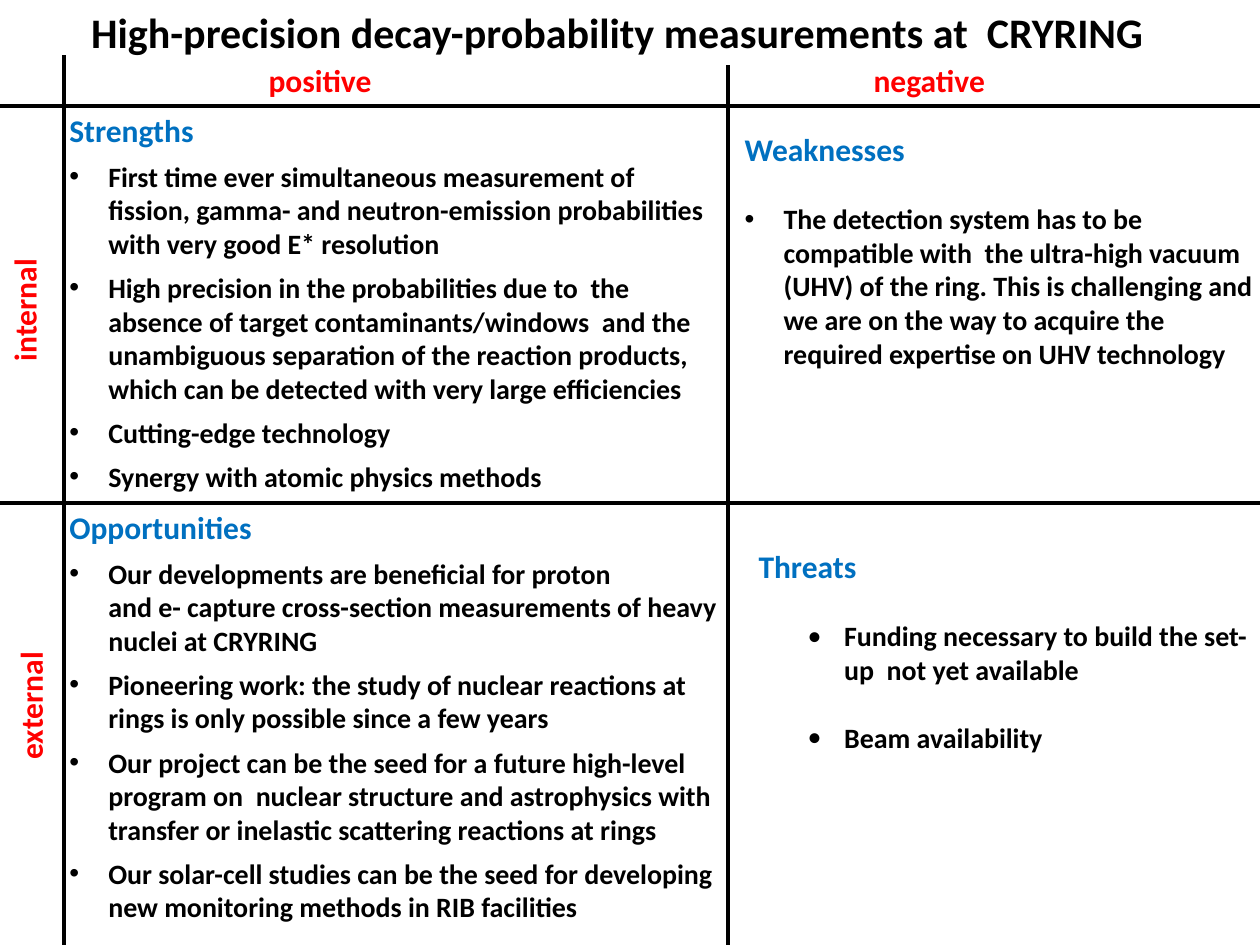
import pptx
import pptx.util
import pptx.dml.color
import pptx.enum.shapes
import pptx.enum.text
import pptx.oxml.ns
import lxml.etree

Inches = pptx.util.Inches
Pt = pptx.util.Pt
qn = pptx.oxml.ns.qn
CENTER = pptx.enum.text.PP_ALIGN.CENTER


def paint(target, code):
    target.rgb = pptx.dml.color.RGBColor.from_string(code)


def write(para, text, size, code):
    para.text = text
    style = {"name": "Calibri", "size": Pt(size), "bold": True}
    for run in para.runs:
        for key, value in style.items():
            setattr(run.font, key, value)
        paint(run.font.color, code)


deck = pptx.Presentation()
deck.slide_width = Inches(10)
deck.slide_height = Inches(7.5)
slide = deck.slides.add_slide(deck.slide_layouts[6])
shapes = slide.shapes

left, mid, top, half = 0.51, 5.78, 0.84, 3.99
lines = [
    (mid, 0.52, mid, 7.5),
    (left, 0.44, left, 7.5),
    (0, top, 10, top),
    (0, half, 10, half),
]
for ends in lines:
    line = shapes.add_connector(
        pptx.enum.shapes.MSO_CONNECTOR.STRAIGHT, *[Inches(end) for end in ends]
    )
    line.line.width = Pt(2.25)
    paint(line.line.color, "000000")
    props = line._element.find(qn("p:spPr"))
    lxml.etree.SubElement(props, qn("a:effectLst"))

inset = Inches(0.04)
frame = {
    "margin_left": inset,
    "margin_right": inset,
    "margin_top": inset,
    "margin_bottom": inset,
    "word_wrap": True,
    "auto_size": pptx.enum.text.MSO_AUTO_SIZE.SHAPE_TO_FIT_TEXT,
}

panels = [
    ("Strengths", (left, top, 5.2, 3.14), 0.31, 0.31, "Arial", 6, [
        "First time ever simultaneous measurement of fission, gamma- and neutron-emission probabilities with very good E* resolution",
        "High precision in the probabilities due to  the absence of target contaminants/windows  and the unambiguous separation of the reaction products, which can be detected with very large efficiencies",
        "Cutting-edge technology",
        "Synergy with atomic physics methods",
    ]),
    ("Weaknesses", (5.87, 0.99, 4.13, 2), 0.31, 0.31, "Arial", 19.5, [
        "The detection system has to be compatible with  the ultra-high vacuum (UHV) of the ring. This is challenging and we are on the way to acquire the required expertise on UHV technology",
    ]),
    ("Opportunities", (left, half, 5.28, 3.68), 0.31, 0.31, "Arial", 6, [
        "Our developments are beneficial for proton\vand e- capture cross-section measurements of heavy nuclei at CRYRING",
        "Pioneering work: the study of nuclear reactions at rings is only possible since a few years",
        "Our project can be the seed for a future high-level program on  nuclear structure and astrophysics with transfer or inelastic scattering reactions at rings",
        "Our solar-cell studies can be the seed for developing new monitoring methods in RIB facilities",
    ]),
    ("Threats", (5.98, 4.3, 4.02, 2), 0.68, 0.29, "Calibri", 19.5, [
        "Funding necessary to build the set-\vup  not yet available",
        "Beam availability",
    ]),
]
for head, place, margin, hang, face, gap, items in panels:
    box = shapes.add_textbox(*[Inches(side) for side in place])
    body = box.text_frame
    for key, value in frame.items():
        setattr(body, key, value)
    write(body.paragraphs[0], head, 18, "0070C0")
    for item in items:
        para = body.add_paragraph()
        props = para._p.get_or_add_pPr()
        props.set("marL", str(Inches(margin)))
        props.set("indent", str(-Inches(hang)))
        lxml.etree.SubElement(props, qn("a:buFont"), typeface=face)
        lxml.etree.SubElement(props, qn("a:buChar"), char="•")
        para.space_before = Pt(gap)
        write(para, item, 16, "000000")

labels = [
    ("internal", (-0.31, 2.27, 1, 0.38), 270, 18, "FF0000", False),
    ("external", (-0.28, 5.41, 1.04, 0.38), 270, 18, "FF0000", False),
    ("positive", (2.04, 0.44, 1, 0.38), 0, 18, "FF0000", False),
    ("negative", (6.85, 0.44, 1.05, 0.38), 0, 18, "FF0000", False),
    ("High-precision decay-probability measurements at  CRYRING",
     (0, 0, 9.8, 0.5), 0, 24, "000000", True),
]
for text, place, turn, size, code, wrap in labels:
    box = shapes.add_textbox(*[Inches(side) for side in place])
    box.rotation = turn
    body = box.text_frame
    for key, value in frame.items():
        setattr(body, key, value)
    body.word_wrap = wrap
    if wrap:
        body.margin_top = body.margin_bottom = Inches(0.05)
    para = body.paragraphs[0]
    para.alignment = CENTER
    write(para, text, size, code)

deck.save("out.pptx")
